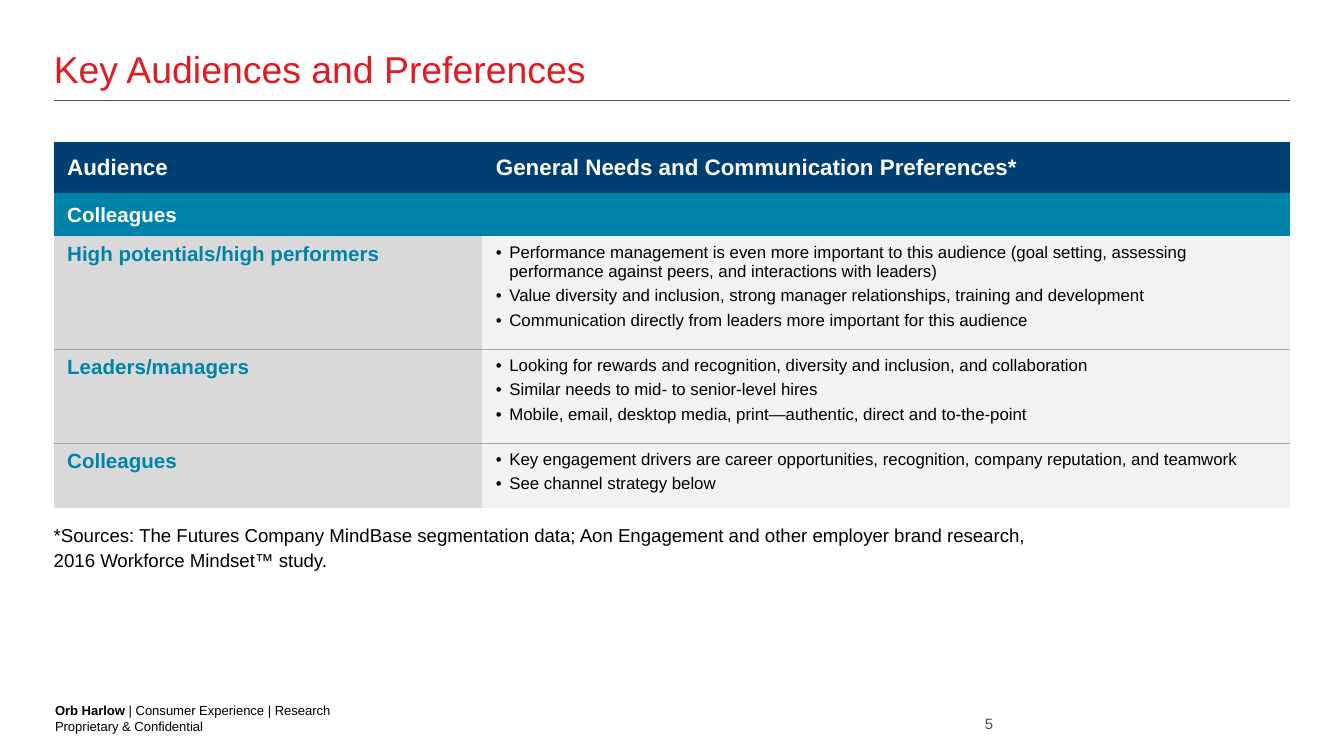
import lxml.etree
import pptx
import pptx.dml.color
import pptx.enum.shapes
import pptx.enum.text
import pptx.oxml.ns
import pptx.util

Inches = pptx.util.Inches
Pt = pptx.util.Pt
ALIGN = pptx.enum.text.PP_ALIGN
ANCHOR = pptx.enum.text.MSO_ANCHOR
qn = pptx.oxml.ns.qn

COLORS = {
    "red": "E11B22", "gray": "4D4F53", "black": "000000", "white": "FFFFFF",
    "navy": "003F72", "teal": "0083A9", "label": "D9D9D9", "body": "F2F2F2",
    "border": "A6A6A6",
}
NO_STYLE = "{2D5ABB26-0587-4C30-8999-92F81FD0307C}"
LEFT, WIDTH = 0.4, 9.2

AUDIENCES = [
    ("High potentials/high performers", [
        "Performance management is even more important to this audience (goal setting, "
        "assessing performance against peers, and interactions with leaders)",
        "Value diversity and inclusion, strong manager relationships, training and development",
        "Communication directly from leaders more important for this audience",
    ]),
    ("Leaders/managers", [
        "Looking for rewards and recognition, diversity and inclusion, and collaboration",
        "Similar needs to mid- to senior-level hires",
        "Mobile, email, desktop media, print—authentic, direct and to-the-point",
    ]),
    ("Colleagues", [
        "Key engagement drivers are career opportunities, recognition, company reputation, "
        "and teamwork",
        "See channel strategy below",
    ]),
]


def rgb(name):
    return pptx.dml.color.RGBColor.from_string(COLORS[name])


def write(p, text, size=9, color="black", bold=False, align=ALIGN.LEFT,
          line=None, after=None, bullet=False):
    if bullet:
        pPr = p._p.get_or_add_pPr()
        pPr.set("marL", str(Inches(0.1)))
        pPr.set("indent", str(Inches(-0.1)))
        lxml.etree.SubElement(pPr, qn("a:buFont")).set("typeface", "Arial")
        lxml.etree.SubElement(pPr, qn("a:buChar")).set("char", "•")
    p.alignment = align
    if line:
        p.line_spacing = line
    if after is not None:
        p.space_after = Pt(after)
    for i, part in enumerate(text.split("\n")):
        if i:
            p.add_line_break()
        r = p.add_run()
        r.text = part
        r.font.name = "Arial"
        r.font.size = Pt(size)
        r.font.bold = bold
        r.font.color.rgb = rgb(color)


class Deck:
    def __init__(self, width, height):
        self.prs = pptx.Presentation()
        self.prs.slide_width = Inches(width)
        self.prs.slide_height = Inches(height)
        self.s = None

    def frame(self, sp, anchor, margins=(0, 0, 0, 0)):
        tf = sp.text_frame
        tf.word_wrap = True
        tf.auto_size = pptx.enum.text.MSO_AUTO_SIZE.NONE
        tf.vertical_anchor = anchor
        tf.margin_left, tf.margin_top, tf.margin_right, tf.margin_bottom = map(Inches, margins)
        return tf.paragraphs[0]

    def slide(self, title):
        self.s = self.prs.slides.add_slide(self.prs.slide_layouts[5])
        sp = self.s.shapes.title
        sp.left, sp.top, sp.width, sp.height = map(Inches, (LEFT, 0.25, WIDTH, 0.43))
        write(self.frame(sp, ANCHOR.BOTTOM), title, size=20, color="red", line=0.9)

    def text(self, box, anchor=ANCHOR.BOTTOM, margins=(0, 0, 0, 0)):
        sp = self.s.shapes.add_textbox(*map(Inches, box))
        return self.frame(sp, anchor, margins)

    def rule(self, y):
        sp = self.s.shapes.add_connector(
            pptx.enum.shapes.MSO_CONNECTOR.STRAIGHT,
            *map(Inches, (LEFT, y, LEFT + WIDTH, y)))
        sp.line.color.rgb = rgb("gray")
        sp.line.width = Pt(0.75)
        lxml.etree.SubElement(sp._element.spPr, qn("a:effectLst"))

    def table(self, top, columns, rows):
        sp = self.s.shapes.add_table(
            len(rows), len(columns),
            *map(Inches, (LEFT, top, sum(columns), sum(rows))))
        table = sp.table
        table.first_row = table.horz_banding = False
        sp._element.find(".//" + qn("a:tableStyleId")).text = NO_STYLE
        for column, width in zip(table.columns, columns):
            column.width = Inches(width)
        for row, height in zip(table.rows, rows):
            row.height = Inches(height)
        return table

    def cell(self, cell, lines, fill, anchor=ANCHOR.TOP, borders=(), **fmt):
        tcPr = cell._tc.get_or_add_tcPr()
        for side in borders:
            ln = lxml.etree.SubElement(tcPr, qn("a:ln" + side), w=str(Pt(0.5)))
            solid = lxml.etree.SubElement(ln, qn("a:solidFill"))
            lxml.etree.SubElement(solid, qn("a:srgbClr"), val=COLORS["border"])
        cell.fill.solid()
        cell.fill.fore_color.rgb = rgb(fill)
        cell.vertical_anchor = anchor
        tf = cell.text_frame
        for i, text in enumerate(lines):
            write(tf.add_paragraph() if i else tf.paragraphs[0], text, **fmt)


def main():
    deck = Deck(10, 10 * 9 / 16)
    deck.slide("Key Audiences and Preferences")
    deck.rule(0.75)

    table = deck.table(1.06, [3.19, 6.01], [0.38, 0.32, 0.84, 0.7, 0.48])
    heads = ["Audience", "General Needs and Communication Preferences*"]
    for column, head in enumerate(heads):
        deck.cell(table.cell(0, column), [head], "navy", ANCHOR.MIDDLE,
                  size=12, color="white", bold=True)
    table.cell(1, 0).merge(table.cell(1, 1))
    deck.cell(table.cell(1, 0), ["Colleagues"], "teal", ANCHOR.MIDDLE,
              size=11, color="white", bold=True)
    last = len(AUDIENCES) - 1
    for i, (audience, needs) in enumerate(AUDIENCES):
        borders = ["T"] * (i > 0) + ["B"] * (i < last)
        deck.cell(table.cell(i + 2, 0), [audience], "label", borders=borders,
                  size=11, color="teal", bold=True, after=3)
        deck.cell(table.cell(i + 2, 1), needs, "body", borders=borders,
                  after=3, bullet=True)

    sources = deck.text((LEFT, 3.78, 7.54, 0.52), ANCHOR.TOP, (0, 0.1, 0.1, 0.05))
    write(sources, "*Sources: The Futures Company MindBase segmentation data; Aon Engagement "
          "and other employer brand research, 2016 Workforce Mindset™ study.",
          size=10, line=1.1, after=12)

    footer = deck.text((0.41, 5.22, 6.6, 0.24))
    write(footer, "Orb Harlow ", size=7, bold=True)
    write(footer, "| Consumer Experience | Research\nProprietary & Confidential", size=7)
    number = deck.text((7, 5.32, 0.39, 0.13))
    write(number, "5", size=8, color="gray", align=ALIGN.RIGHT)

    deck.prs.save("out.pptx")


if __name__ == "__main__":
    main()
